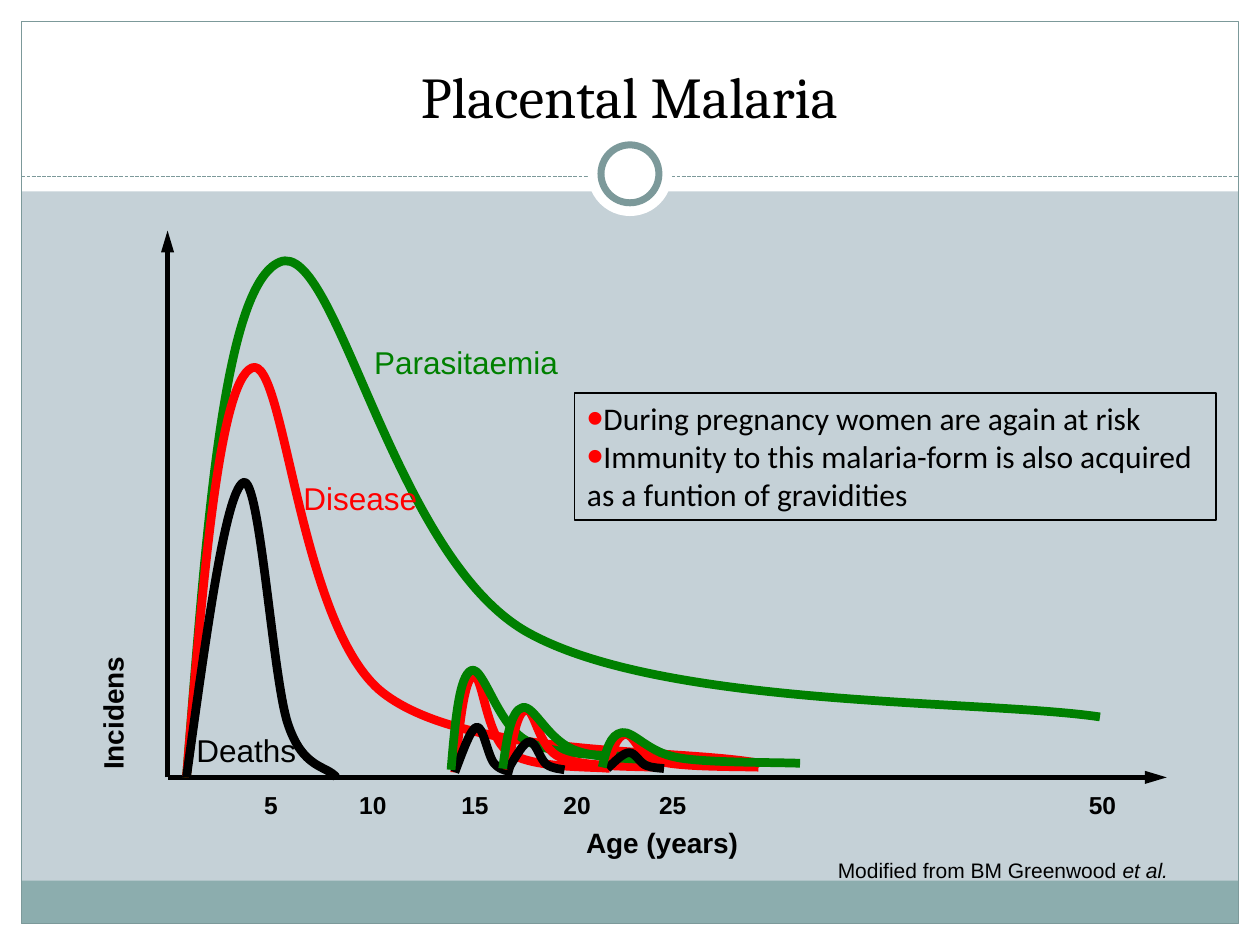
from dataclasses import dataclass

from lxml import etree
from pptx import Presentation
from pptx.dml.color import RGBColor
from pptx.enum.dml import MSO_LINE
from pptx.enum.shapes import MSO_CONNECTOR, MSO_SHAPE
from pptx.enum.text import MSO_ANCHOR, PP_ALIGN
from pptx.oxml.ns import qn
from pptx.util import Inches, Pt

RECTANGLE, OVAL = MSO_SHAPE.RECTANGLE, MSO_SHAPE.OVAL
LEFT, CENTER = PP_ALIGN.LEFT, PP_ALIGN.CENTER
TOP, BOTTOM = MSO_ANCHOR.TOP, MSO_ANCHOR.BOTTOM
STRAIGHT, DASHED = MSO_CONNECTOR.STRAIGHT, MSO_LINE.SQUARE_DOT


@dataclass(frozen=True)
class Theme:
    background: str = "C5D1D7"
    white: str = "FFFFFF"
    band: str = "8CADAE"
    frame: str = "7C999A"
    black: str = "000000"
    red: str = "FF0000"
    green: str = "008000"
    title_font: str = "Cambria"
    chart_font: str = "Arial"
    note_font: str = "Calibri"
    title_size: int = 33
    label_size: int = 18
    axis_size: int = 16
    tick_size: int = 14
    credit_size: int = 12
    curve_width: int = 5
    axis_width: float = 2.5


THEME = Theme()
COLUMNS, ROWS = 10, 7.5
CELL = Inches(1)
MARGIN = 0.17
HEADER = 1.52
DIVIDER = 1.4
ORIGIN = (1.33, 6.17)
AXIS_ENDS = [(9.26, ORIGIN[1]), (ORIGIN[0], 1.83)]
TICK_WIDTH = 0.46

TITLE = "Placental Malaria"
NOTES = [
    "During pregnancy women are again at risk",
    "Immunity to this malaria-form is also acquired as a funtion of gravidities",
]
CREDIT = [("Modified from BM Greenwood ", False), ("et al.", True)]
TICKS = [("5", 2.15), ("10", 2.96), ("15", 3.77), ("20", 4.58), ("25", 5.34), ("50", 8.75)]
CURVE_LABELS = [
    ("Deaths", (1.46, 5.75, 0.99, 0.4), THEME.black),
    ("Disease", (2.31, 3.75, 1.1, 0.4), THEME.red),
    ("Parasitaemia", (2.87, 2.67, 1.66, 0.4), THEME.green),
]
CHILDHOOD_CURVES = [
    (THEME.green, [(1.48, 6.17), (1.64, 4.19), (1.77, 2.27), (2.22, 2.08), (2.67, 1.89),
                   (3.11, 4.42), (4.19, 5.02), (5.27, 5.62), (7.78, 5.55), (8.73, 5.69)]),
    (THEME.red, [(1.48, 6.17), (1.61, 4.6), (1.74, 3.03), (2, 2.92), (2.26, 2.81),
                 (2.37, 4.98), (3.04, 5.5), (3.71, 6.02), (5.41, 5.94), (6.03, 6.06)]),
    (THEME.black, [(1.48, 6.17), (1.64, 5.01), (1.79, 3.91), (1.93, 3.83), (2.06, 3.76),
                   (2.16, 5.34), (2.28, 5.73), (2.4, 6.11), (2.59, 6.07), (2.67, 6.17)]),
]
EPISODE_CURVES = {
    "disease": (THEME.red,
                [(0, 0), (0.03, 0.47), (0.06, 0.94), (0.12, 0.97), (0.18, 1),
                 (0.2, 0.35), (0.35, 0.2), (0.5, 0.04), (0.87, 0.06), (1, 0.04)]),
    "deaths": (THEME.black,
               [(0, 0), (0.15, 0.49), (0.28, 0.95), (0.38, 0.97), (0.49, 1),
                (0.57, 0.35), (0.68, 0.19), (0.79, 0.03), (0.94, 0.03), (1, 0)]),
    "parasitaemia": (THEME.green,
                     [(0, 0), (0.02, 0.46), (0.04, 0.9), (0.1, 0.95), (0.16, 1),
                      (0.23, 0.41), (0.38, 0.27), (0.52, 0.12), (0.87, 0.14), (1, 0.11)]),
}
PREGNANCIES = [
    {"disease": (3.61, 6.13, 1.23, 0.79), "deaths": (3.61, 6.13, 0.46, 0.37),
     "parasitaemia": (3.58, 6.11, 1.61, 0.83)},
    {"disease": (4.03, 6.11, 1.2, 0.49), "deaths": (4.03, 6.11, 0.45, 0.23),
     "parasitaemia": (3.99, 6.1, 1.57, 0.51)},
    {"disease": (4.82, 6.1, 1.2, 0.28), "deaths": (4.82, 6.1, 0.45, 0.13),
     "parasitaemia": (4.78, 6.09, 1.57, 0.29)},
]


def cells(*values):
    return [int(value * CELL) for value in values]


def color(value):
    return RGBColor.from_string(value)


def style_line(shape, line_color, width):
    shape.line.color.rgb = color(line_color)
    shape.line.width = Pt(width)


def add_panel(shapes, kind, box, fill=None, line=None, width=0.75):
    shape = shapes.add_shape(kind, *cells(*box))
    shape.shadow.inherit = False
    if fill:
        shape.fill.solid()
        shape.fill.fore_color.rgb = color(fill)
    else:
        shape.fill.background()
    if line:
        style_line(shape, line, width)
    else:
        shape.line.fill.background()
    return shape


def add_line(shapes, start, end, line_color, width):
    line = shapes.add_connector(STRAIGHT, *cells(*start, *end))
    style_line(line, line_color, width)
    etree.SubElement(line._element.spPr, qn("a:effectLst"))
    return line


def add_curve(shapes, points, line_color):
    builder = shapes.build_freeform(*cells(*points[0]))
    builder.add_line_segments([cells(*point) for point in points[1:]], close=False)
    shape = builder.convert_to_shape()
    outline = shape._element.find(".//" + qn("a:path"))
    segments = outline.findall(qn("a:lnTo"))
    for index, segment in enumerate(segments):
        if index % 3 == 0:
            bezier = etree.SubElement(outline, qn("a:cubicBezTo"))
        bezier.append(segment[0])
        outline.remove(segment)
    shape.fill.background()
    shape.shadow.inherit = False
    style_line(shape, line_color, THEME.curve_width)


def format_text(frame, font, size, text_color=THEME.black, bold=False, align=CENTER):
    for paragraph in frame.paragraphs:
        paragraph.alignment = align
        for run in paragraph.runs:
            run.font.name = font
            run.font.size = Pt(size)
            run.font.bold = bold
            run.font.color.rgb = color(text_color)


def add_label(shapes, text, box, size, text_color=THEME.black, bold=False, wrap=False, align=CENTER):
    frame = shapes.add_textbox(*cells(*box)).text_frame
    frame.word_wrap = wrap
    frame.text = text
    format_text(frame, THEME.chart_font, size, text_color, bold, align)
    return frame


def add_bullet(paragraph):
    properties = paragraph._p.get_or_add_pPr()
    properties.set("marL", "0")
    properties.set("indent", "0")
    bullet_color = etree.SubElement(properties, qn("a:buClr"))
    etree.SubElement(bullet_color, qn("a:srgbClr"), val=THEME.red)
    etree.SubElement(properties, qn("a:buSzPct"), val="150000")
    etree.SubElement(properties, qn("a:buFont"), typeface=THEME.chart_font)
    etree.SubElement(properties, qn("a:buChar"), char="•")


def add_frame(shapes):
    inner_width, inner_height = COLUMNS - 2 * MARGIN, ROWS - 2 * MARGIN
    for box in [(0, ROWS - MARGIN, COLUMNS, MARGIN), (0, 0, COLUMNS, HEADER),
                (0, 0, MARGIN, ROWS), (COLUMNS - MARGIN, 0, MARGIN, ROWS)]:
        add_panel(shapes, RECTANGLE, box, THEME.white)
    band_height = 2 * MARGIN
    add_panel(shapes, RECTANGLE, (MARGIN, ROWS - MARGIN - band_height, inner_width, band_height), THEME.band)
    add_panel(shapes, RECTANGLE, (MARGIN, MARGIN, inner_width, inner_height), line=THEME.frame)
    divider = add_line(shapes, (MARGIN, DIVIDER), (COLUMNS - MARGIN, DIVIDER), THEME.frame, 0.75)
    divider.line.dash_style = DASHED
    for diameter, line in [(0.67, None), (0.46, THEME.frame)]:
        box = ((COLUMNS - diameter) / 2, 1.38 - diameter / 2, diameter, diameter)
        add_panel(shapes, OVAL, box, THEME.white, line, 4)


def add_axis(shapes, end):
    axis = add_line(shapes, ORIGIN, end, THEME.black, THEME.axis_width)
    etree.SubElement(axis.line._get_or_add_ln(), qn("a:tailEnd"), type="triangle", w="med", len="lg")


def add_childhood_chart(shapes):
    add_axis(shapes, AXIS_ENDS[0])
    for line_color, points in CHILDHOOD_CURVES:
        add_curve(shapes, points, line_color)
    add_axis(shapes, AXIS_ENDS[1])
    for text, center in TICKS:
        box = (center - TICK_WIDTH / 2, 6.22, TICK_WIDTH, 0.33)
        add_label(shapes, text, box, THEME.tick_size, bold=True)
    for text, box, text_color in CURVE_LABELS:
        add_label(shapes, text, box, THEME.label_size, text_color)
    incidence = add_label(shapes, "Incidens", (0.71, 2.21, 0.47, 4), THEME.axis_size,
                          bold=True, wrap=True, align=LEFT)
    incidence._txBody.bodyPr.set("vert", "vert270")
    add_label(shapes, "Age (years)", (ORIGIN[0], 6.5, 7.85, 0.37), THEME.axis_size, bold=True, wrap=True)


def add_pregnancy_curves(shapes):
    for episode in PREGNANCIES:
        for name, (left, base, width, height) in episode.items():
            line_color, profile = EPISODE_CURVES[name]
            add_curve(shapes, [(left + x * width, base - y * height) for x, y in profile], line_color)


def main():
    presentation = Presentation()
    presentation.slide_width, presentation.slide_height = cells(COLUMNS, ROWS)
    slide = presentation.slides.add_slide(presentation.slide_layouts[5])
    slide.background.fill.solid()
    slide.background.fill.fore_color.rgb = color(THEME.background)
    shapes = slide.shapes
    add_frame(shapes)

    title = shapes.title
    title.left, title.top, title.width, title.height = cells(0.33, 0.25, 9.33, 0.83)
    title.text_frame.text = TITLE
    title.text_frame.vertical_anchor = BOTTOM
    format_text(title.text_frame, THEME.title_font, THEME.title_size)
    shapes._spTree.append(title._element)

    add_childhood_chart(shapes.add_group_shape().shapes)
    add_pregnancy_curves(shapes.add_group_shape().shapes)

    credit = add_label(shapes, "", (5.92, 6.76, 4.08, 0.3), THEME.credit_size, wrap=True)
    for text, italic in CREDIT:
        run = credit.paragraphs[0].add_run()
        run.text = text
        run.font.italic = italic
    format_text(credit, THEME.chart_font, THEME.credit_size)

    notes = add_panel(shapes, RECTANGLE, (4.56, 3.12, 5.09, 1.01), line=THEME.black, width=1).text_frame
    notes.word_wrap = True
    notes.vertical_anchor = TOP
    notes.text = "\n".join(NOTES)
    format_text(notes, THEME.note_font, THEME.label_size, align=LEFT)
    for paragraph in notes.paragraphs:
        add_bullet(paragraph)

    presentation.save("out.pptx")


if __name__ == "__main__":
    main()
